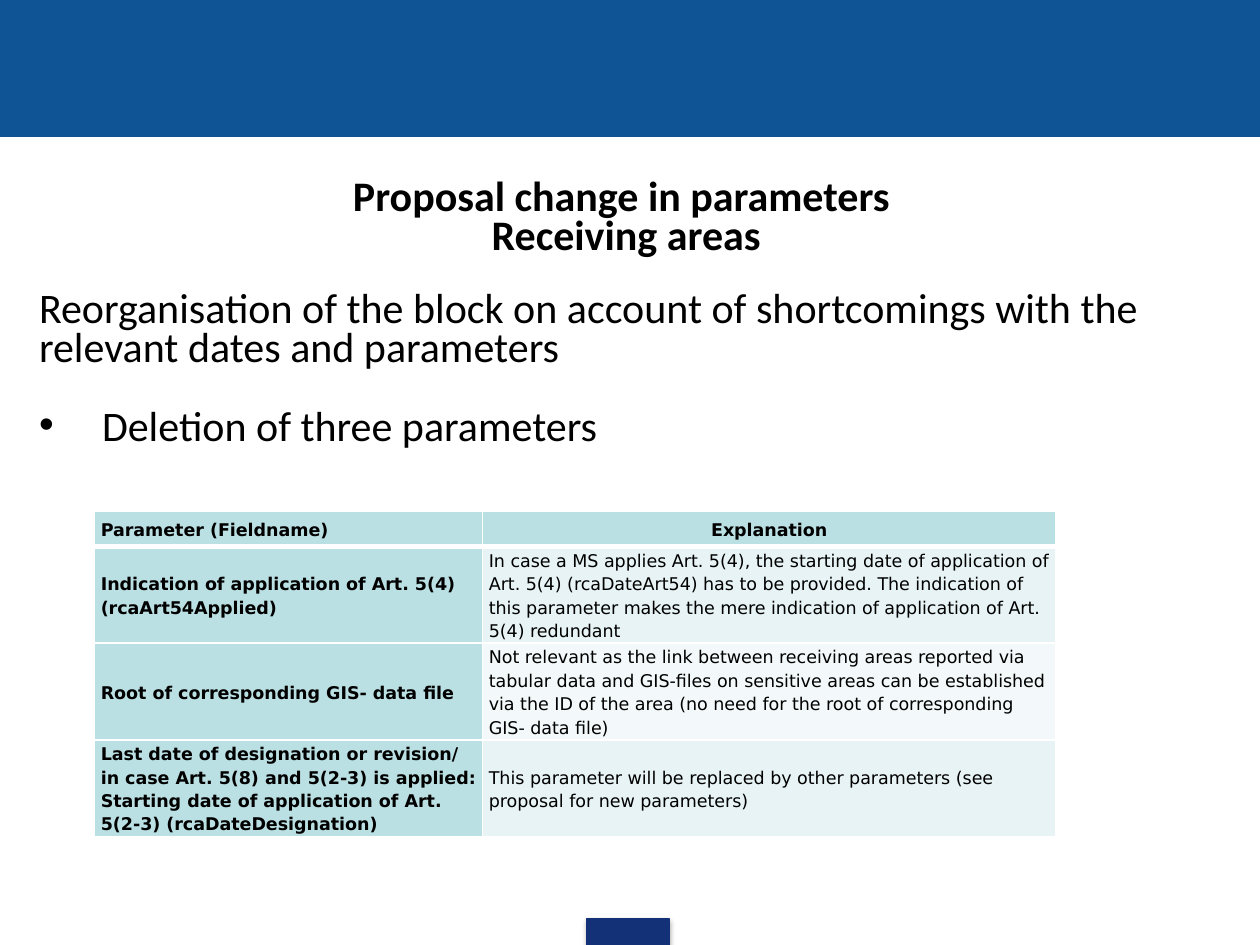
from lxml import etree
from pptx import Presentation
from pptx.dml.color import RGBColor
from pptx.enum.shapes import MSO_SHAPE as Preset
from pptx.enum.text import MSO_ANCHOR as Anchor, PP_ALIGN as Align
from pptx.oxml.ns import qn
from pptx.util import Inches, Pt

WIDTH, HEIGHT = 10, 7.5
COLORS = {
    "banner": "0F5494", "tab": "133176", "text": "000000", "border": "FFFFFF",
    "heading": "BBE0E3", "odd": "E7F3F4", "even": "F3F9FA", "shadow": "000000",
}
TITLE = {"size": Pt(24), "name": "Calibri", "bold": True}
BODY = {**TITLE, "bold": False}
CELL = {"size": Pt(10), "name": "DejaVu Sans", "bold": False}
CELL_HEADING = {**CELL, "bold": True}

# Boxes: left, top, width, height as shares of the slide
BANNER_BOX = (0, 0, 1, 0.144)
TAB_BOX = (0.466, 0.972, 0.065, 0.029)
TEXT_BOX = (0.022, 0.185, 0.95, 0.095)
TABLE_BOX = (0.075, 0.541, 0.763, 0.32)
COLUMN_INCHES = (3.08, 4.55)
ROW_INCHES = (0.28, 0.74, 0.69, 0.69)

# Text, font, alignment, left margin, space before, bullet
PARAGRAPHS = [
    ("Proposal change in parameters ", TITLE, Align.CENTER, 0.27, 0, None),
    ("Receiving areas", TITLE, Align.CENTER, 0.27, 0, None),
    ("Reorganisation of the block on account of shortcomings with the "
     "relevant dates and parameters", BODY, Align.LEFT, 0, 19, None),
    ("Deletion of three parameters", BODY, Align.LEFT, 0.5, 22.5, "•"),
]
ROWS = [
    ("Parameter (Fieldname)", "Explanation"),
    ("Indication of application of Art. 5(4) (rcaArt54Applied)",
     "In case a MS applies Art. 5(4), the starting date of application of "
     "Art. 5(4) (rcaDateArt54) has to be provided. The indication of this "
     "parameter makes the mere indication of application of Art. 5(4) redundant"),
    ("Root of corresponding GIS- data file",
     "Not relevant as the link between receiving areas reported via tabular "
     "data and GIS-files on sensitive areas can be established via the ID of "
     "the area (no need for the root of corresponding GIS- data file)"),
    ("Last date of designation or revision/ in case Art. 5(8) and 5(2-3) is "
     "applied: Starting date of application of Art. 5(2-3) (rcaDateDesignation)",
     "This parameter will be replaced by other parameters (see proposal for "
     "new parameters)"),
]


def color(name):
    return RGBColor.from_string(COLORS[name])


def place(box):
    return [Inches(share * side) for share, side in zip(box, (WIDTH, HEIGHT) * 2)]


def add_element(parent, tag, **attributes):
    return etree.SubElement(parent, qn(tag), attributes)


def set_format(target, values):
    for name, value in values.items():
        setattr(target, name, value)


def style_font(paragraph, values):
    set_format(paragraph.font, values)
    paragraph.font.color.rgb = color("text")


def add_bar(slide, box, color_name):
    shape = slide.shapes.add_shape(Preset.RECTANGLE, *place(box))
    shape.shadow.inherit = False
    shape.fill.solid()
    shape.fill.fore_color.rgb = color(color_name)
    shape.line.color.rgb = color(color_name)
    shape.line.width = Pt(0.75)
    return shape


def add_footer_tab(slide, box):
    shape = add_bar(slide, box, "tab")
    effects = shape._element.spPr.find(qn("a:effectLst"))
    shadow = add_element(effects, "a:outerShdw", blurRad=str(Pt(3.1)),
                         dist=str(Pt(1.8)), dir="5400000", rotWithShape="0")
    tint = add_element(shadow, "a:srgbClr", val=COLORS["shadow"])
    add_element(tint, "a:alpha", val="35000")


def add_text(slide, box):
    frame = slide.shapes.add_textbox(*place(box)).text_frame
    set_format(frame, {
        "word_wrap": True, "vertical_anchor": Anchor.TOP,
        "margin_left": Inches(0.09), "margin_right": Inches(0.09),
        "margin_top": Inches(0.04), "margin_bottom": Inches(0.04),
    })
    for index, (text, font, align, margin, before, bullet) in enumerate(PARAGRAPHS):
        paragraph = frame.add_paragraph() if index else frame.paragraphs[0]
        paragraph.text = text
        set_format(paragraph, {"alignment": align, "line_spacing": 0.78})
        if before:
            paragraph.space_before = Pt(before)
        properties = paragraph._p.get_or_add_pPr()
        properties.set("marL", str(Inches(margin)))
        properties.set("indent", str(-Inches(margin)))
        if bullet:
            add_element(properties, "a:buFont", typeface="Arial")
            add_element(properties, "a:buChar", char=bullet)
        else:
            add_element(properties, "a:buNone")
        style_font(paragraph, font)


def add_borders(cell, widths):
    properties = cell._tc.get_or_add_tcPr()
    for side, width in widths.items():
        line = add_element(properties, f"a:ln{side}", w=str(Pt(width)))
        fill = add_element(line, "a:solidFill")
        add_element(fill, "a:srgbClr", val=COLORS["border"])


def fill_cell(cell, text, row, column):
    # Thick rule below the header row, thin rules elsewhere
    add_borders(cell, {"L": 1, "R": 1, "T": 3 if row == 1 else 1,
                       "B": 3 if row == 0 else 1})
    is_heading = row == 0 or column == 0
    cell.fill.solid()
    cell.fill.fore_color.rgb = color(
        "heading" if is_heading else "odd" if row % 2 else "even")
    set_format(cell, {
        "vertical_anchor": Anchor.MIDDLE, "margin_top": 0, "margin_bottom": 0,
        "margin_left": Inches(0.05), "margin_right": Inches(0.05),
    })
    cell.text = text
    paragraph = cell.text_frame.paragraphs[0]
    paragraph.line_spacing = 1.15
    paragraph.alignment = Align.CENTER if (row, column) == (0, 1) else Align.LEFT
    style_font(paragraph, CELL_HEADING if is_heading else CELL)


def add_parameter_table(slide, box):
    table = slide.shapes.add_table(len(ROWS), len(ROWS[0]), *place(box)).table
    for column, width in zip(table.columns, COLUMN_INCHES):
        column.width = Inches(width)
    for row, height in zip(table.rows, ROW_INCHES):
        row.height = Inches(height)
    for row, texts in enumerate(ROWS):
        for column, text in enumerate(texts):
            fill_cell(table.cell(row, column), text, row, column)


def main():
    presentation = Presentation()
    presentation.slide_width = Inches(WIDTH)
    presentation.slide_height = Inches(HEIGHT)
    slide = presentation.slides.add_slide(presentation.slide_layouts[6])
    add_bar(slide, BANNER_BOX, "banner")
    add_footer_tab(slide, TAB_BOX)
    add_text(slide, TEXT_BOX)
    add_parameter_table(slide, TABLE_BOX)
    presentation.save("out.pptx")


if __name__ == "__main__":
    main()
